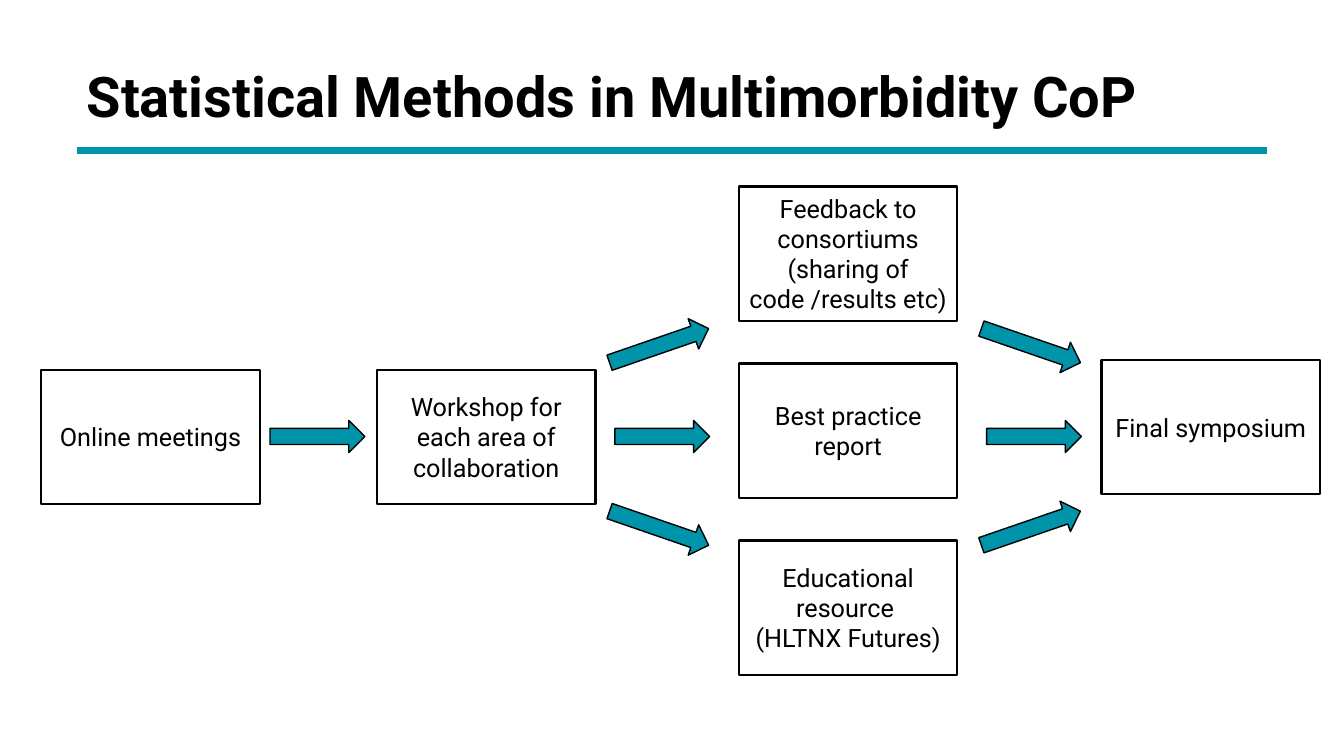
import pptx
import pptx.dml.color
import pptx.enum.shapes
import pptx.enum.text
import pptx.oxml
import pptx.util
from pptx.util import Cm

TEAL = pptx.dml.color.RGBColor(0x00, 0x94, 0xAB)
BLACK = pptx.dml.color.RGBColor(0x00, 0x00, 0x00)
WHITE = pptx.dml.color.RGBColor(0xFF, 0xFF, 0xFF)

SHAPES = pptx.enum.shapes.MSO_SHAPE
ALIGN = pptx.enum.text.PP_ALIGN

BOX_WIDTH, BOX_HEIGHT = 5.51, 3.38
ARROW_HEIGHT = 0.81


class FlowSlide:
    """Holds the slide and the style of its elements; lengths are in cm."""

    font_name = "Roboto"

    def __init__(self, presentation):
        self.slide = presentation.slides.add_slide(presentation.slide_layouts[5])

    def set_text(self, shape, lines, size, bold, paragraph_format):
        frame = shape.text_frame
        frame.text = "\n".join(lines)
        frame.word_wrap = True
        frame.auto_size = pptx.enum.text.MSO_AUTO_SIZE.NONE
        frame.vertical_anchor = pptx.enum.text.MSO_ANCHOR.MIDDLE
        font_format = {"name": self.font_name, "size": pptx.util.Pt(size), "bold": bold}
        for paragraph in frame.paragraphs:
            for name, value in paragraph_format.items():
                setattr(paragraph, name, value)
            for run in paragraph.runs:
                for name, value in font_format.items():
                    setattr(run.font, name, value)
                run.font.color.rgb = BLACK

    def title(self, text, left, top, width, height):
        title = self.slide.shapes.title
        place = {"left": left, "top": top, "width": width, "height": height}
        for name, value in place.items():
            setattr(title, name, Cm(value))
        self.set_text(title, [text], 40, True, {"alignment": ALIGN.LEFT, "line_spacing": 0.9})

    def rule(self, left, right, y):
        rule = self.slide.shapes.add_connector(
            pptx.enum.shapes.MSO_CONNECTOR.STRAIGHT, Cm(left), Cm(y), Cm(right), Cm(y))
        rule.line.color.rgb = TEAL
        rule.line.width = pptx.util.Pt(4.5)
        properties = rule._element.spPr
        properties.append(pptx.oxml.parse_xml(
            '<a:effectLst xmlns:a="http://schemas.openxmlformats.org/drawingml/2006/main"/>'))

    def outlined(self, kind, left, top, width, height, fill, line_width):
        shape = self.slide.shapes.add_shape(kind, Cm(left), Cm(top), Cm(width), Cm(height))
        shape.shadow.inherit = False
        shape.fill.solid()
        shape.fill.fore_color.rgb = fill
        shape.line.color.rgb = BLACK
        shape.line.width = pptx.util.Pt(line_width)
        return shape

    def box(self, left, top, *lines):
        box = self.outlined(SHAPES.RECTANGLE, left, top, BOX_WIDTH, BOX_HEIGHT, WHITE, 1.5)
        self.set_text(box, lines, 18, False, {"alignment": ALIGN.CENTER})

    def arrow(self, center_x, center_y, width, rotation=0):
        arrow = self.outlined(
            SHAPES.RIGHT_ARROW, center_x - width / 2, center_y - ARROW_HEIGHT / 2,
            width, ARROW_HEIGHT, TEAL, 1)
        arrow.rotation = rotation


def main():
    presentation = pptx.Presentation()
    presentation.slide_width = Cm(33.87)
    presentation.slide_height = Cm(19.05)
    flow = FlowSlide(presentation)

    # Heading
    flow.title("Statistical Methods in Multimorbidity CoP", 1.93, 1.22, 28.58, 2.57)
    flow.rule(1.93, 31.93, 3.79)

    # Opening stages
    flow.box(1.04, 9.32, "Online meetings")
    flow.box(9.5, 9.32, "Workshop for each area of collaboration")

    # Workshop outputs, evenly stacked
    outputs = [
        ("Feedback to consortiums", "(sharing of code /results etc)"),
        ("Best practice report",),
        ("Educational resource ", "(HLTNX Futures)"),
    ]
    for row, lines in enumerate(outputs):
        flow.box(18.62, 4.7 + 4.46 * row, *lines)

    # Closing stage
    flow.box(27.76, 9.07, "Final symposium")

    # Level arrows between stages
    for center_x in (8, 16.69, 26.06):
        flow.arrow(center_x, 11, 2.39)

    # Tilted arrows: fanning out to the outputs, then closing in
    for center_x, upper_tilt in ((16.61, -19), (25.98, 19)):
        flow.arrow(center_x, 8.71, 2.64, upper_tilt)
        flow.arrow(center_x, 13.31, 2.64, -upper_tilt)

    presentation.save("out.pptx")


if __name__ == "__main__":
    main()
